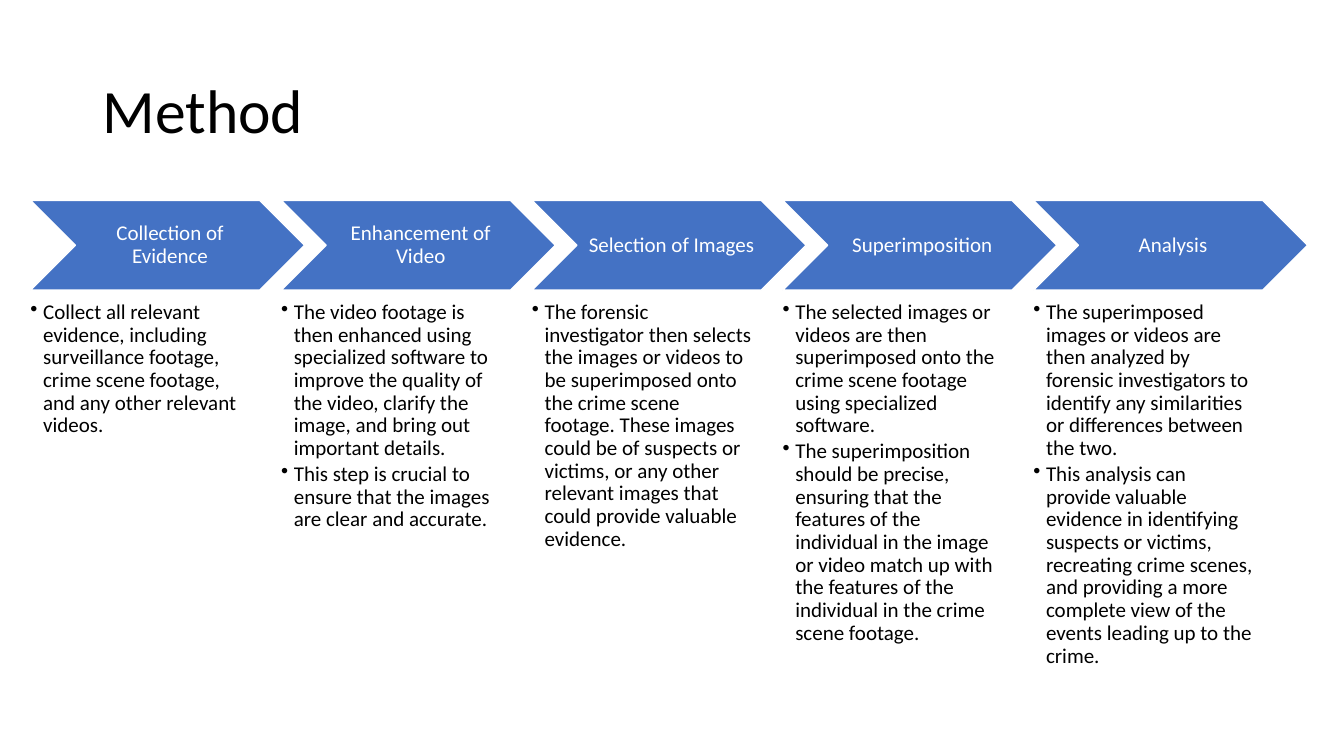
"""Build the Method slide: five process steps, each with a bulleted description."""
from dataclasses import dataclass

from lxml import etree
from pptx import Presentation
from pptx import util as u
from pptx.dml.color import RGBColor
from pptx.enum import shapes, text
from pptx.oxml import ns


@dataclass(frozen=True)
class Theme:
    """Colours, font and type sizes of the slide."""
    font: str = "Calibri"
    accent: str = "4472C4"
    ink: str = "000000"
    paper: str = "FFFFFF"
    title_size: float = 44
    step_size: float = 15


STEPS = [
    ("Collection of Evidence", [
        "Collect all relevant evidence, including surveillance footage, crime scene footage, "
        "and any other relevant videos."]),
    ("Enhancement of Video", [
        "The video footage is then enhanced using specialized software to improve the quality "
        "of the video, clarify the image, and bring out important details.",
        "This step is crucial to ensure that the images are clear and accurate."]),
    ("Selection of Images", [
        "The forensic investigator then selects the images or videos to be superimposed onto "
        "the crime scene footage. These images could be of suspects or victims, or any other "
        "relevant images that could provide valuable evidence."]),
    ("Superimposition", [
        "The selected images or videos are then superimposed onto the crime scene footage "
        "using specialized software.",
        "The superimposition should be precise, ensuring that the features of the individual "
        "in the image or video match up with the features of the individual in the crime "
        "scene footage."]),
    ("Analysis", [
        "The superimposed images or videos are then analyzed by forensic investigators to "
        "identify any similarities or differences between the two.",
        "This analysis can provide valuable evidence in identifying suspects or victims, "
        "recreating crime scenes, and providing a more complete view of the events leading "
        "up to the crime."]),
]


def apply(target, values):
    """Set each named attribute of the target."""
    for name, value in values.items():
        setattr(target, name, value)


class SlideBuilder:
    """Draw styled elements on the current slide."""

    def __init__(self, slide, theme):
        """Keep the slide and its theme."""
        self.slide = slide
        self.theme = theme

    def fill_text(self, shape, lines, size, color, margins, anchor, align, bulleted=False):
        """Fill a shape with formatted paragraphs."""
        frame = shape.text_frame
        frame_format = {"word_wrap": True, "auto_size": text.MSO_AUTO_SIZE.NONE,
                        "vertical_anchor": anchor}
        sides = ("margin_left", "margin_top", "margin_right", "margin_bottom")
        frame_format.update(zip(sides, map(u.Pt, margins)))
        apply(frame, frame_format)
        for index, line in enumerate(lines):
            paragraph = frame.add_paragraph() if index else frame.paragraphs[0]
            paragraph.text = line
            apply(paragraph, {"alignment": align, "line_spacing": 0.9, "space_before": u.Pt(0)})
            if bulleted:
                paragraph.space_after = u.Pt(2.25)
                self.bullet(paragraph)
            apply(paragraph.font, {"name": self.theme.font, "size": u.Pt(size)})
            paragraph.font.color.rgb = RGBColor.from_string(color)

    def bullet(self, paragraph):
        """Give a paragraph a round bullet and a hanging indent."""
        properties = paragraph._p.get_or_add_pPr()
        properties.set("marL", str(u.Pt(9)))
        properties.set("indent", str(u.Pt(-9)))
        etree.SubElement(properties, ns.qn("a:buChar")).set("char", "•")

    def title(self, wording, left, top, width, height):
        """Place the title placeholder."""
        shape = self.slide.shapes.title
        apply(shape, {"left": u.Pt(left), "top": u.Pt(top),
                      "width": u.Pt(width), "height": u.Pt(height)})
        self.fill_text(shape, [wording], self.theme.title_size, self.theme.ink,
                       (7.2, 3.6, 7.2, 3.6), text.MSO_ANCHOR.MIDDLE, text.PP_ALIGN.LEFT)

    def chevron(self, wording, *box):
        """Draw a chevron that holds a step name."""
        shape = self.slide.shapes.add_shape(shapes.MSO_SHAPE.CHEVRON, *map(u.Pt, box))
        shape.shadow.inherit = False
        shape.fill.solid()
        shape.fill.fore_color.rgb = RGBColor.from_string(self.theme.accent)
        shape.line.color.rgb = RGBColor.from_string(self.theme.paper)
        shape.line.width = u.Pt(1)
        self.fill_text(shape, [wording], self.theme.step_size, self.theme.paper,
                       (5, 1.5, 1.5, 1.5), text.MSO_ANCHOR.MIDDLE, text.PP_ALIGN.CENTER)

    def bullet_list(self, lines, *box):
        """Draw a bulleted column of text."""
        shape = self.slide.shapes.add_textbox(*map(u.Pt, box))
        self.fill_text(shape, lines, self.theme.step_size, self.theme.ink, (0, 0, 0, 0),
                       text.MSO_ANCHOR.TOP, text.PP_ALIGN.LEFT, bulleted=True)


def main():
    """Build and save the presentation."""
    presentation = Presentation()
    apply(presentation, {"slide_width": u.Pt(960), "slide_height": u.Pt(540)})
    slide = presentation.slides.add_slide(presentation.slide_layouts[5])
    builder = SlideBuilder(slide, Theme())
    builder.title("Method", 66, 28.75, 828, 104.4)
    first_left, pitch = 21.8, 179.1
    for index, (name, details) in enumerate(STEPS):
        left = first_left + index * pitch
        builder.chevron(name, left, 143.2, 195.8, 64)
        builder.bullet_list(details, left, 215.2, 156.7, 273.6)
    presentation.save("out.pptx")


if __name__ == "__main__":
    main()
